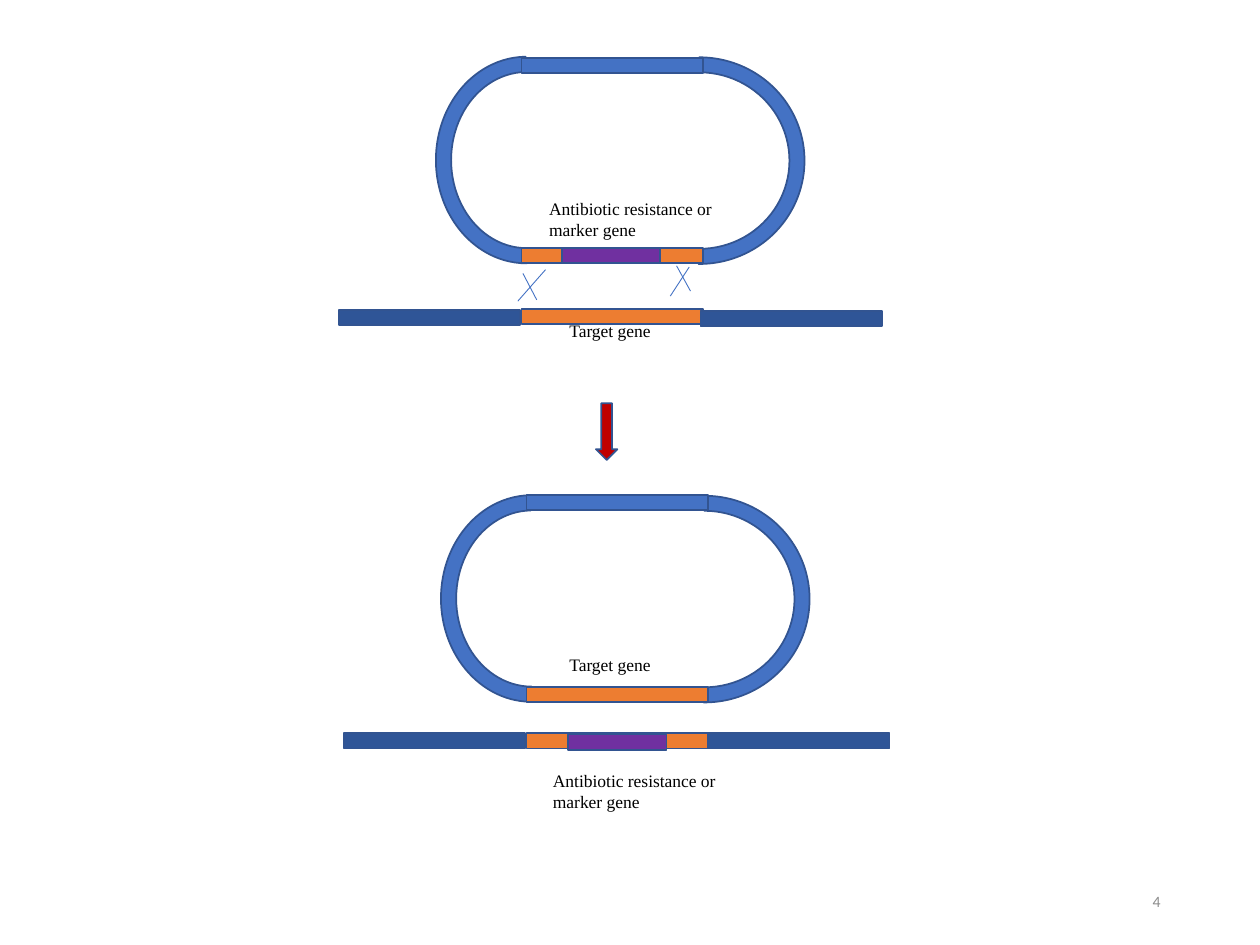
from lxml.etree import SubElement
from pptx import Presentation
from pptx.dml.color import RGBColor
from pptx.enum.shapes import MSO_CONNECTOR as Connector, MSO_SHAPE as Shape
from pptx.enum.text import MSO_ANCHOR as Anchor, MSO_AUTO_SIZE as AutoSize, PP_ALIGN as Align
from pptx.oxml.ns import qn
from pptx.util import Inches, Pt

COLORS = {
    "plasmid": "4472C4",
    "outline": "325491",
    "target": "ED7D31",
    "marker": "7030A0",
    "chromosome": "2F5597",
    "arrow": "C00000",
    "text": "000000",
    "number": "8C8C8C",
}
BAR_WIDTH, BAR_HEIGHT, MARKER_WIDTH = 1.44, 0.12, 0.78
MARKER_LABEL = "Antibiotic resistance or marker gene"
TARGET_LABEL = "Target gene"


def color(name):
    return RGBColor.from_string(COLORS[name])


def add_block(shapes, kind, left, top, width, height, fill):
    block = shapes.add_shape(kind, Inches(left), Inches(top), Inches(width), Inches(height))
    block.shadow.inherit = False
    block.fill.solid()
    block.fill.fore_color.rgb = color(fill)
    block.line.color.rgb = color("outline")
    block.line.width = Pt(1)
    return block


def add_bar(shapes, left, top, fill, width=BAR_WIDTH):
    add_block(shapes, Shape.RECTANGLE, left, top, width, BAR_HEIGHT, fill)


def add_arc(shapes, left, top, width, height, rotation, end_angle, thickness):
    arc = add_block(shapes, Shape.BLOCK_ARC, left, top, width, height, "plasmid")
    arc.rotation = rotation
    for index, value in enumerate((108, end_angle, thickness)):
        arc.adjustments[index] = value


def add_plasmid_ends(shapes, left, top):
    add_arc(shapes, left, top, 1.64, 1.44, 270, 215.64, 0.084)
    add_arc(shapes, left + 1.37, top - 0.11, 1.64, 1.67, 90, 0.22, 0.073)


def add_text(shapes, text, left, top, width, height, size=10,
             font="Times New Roman", fill="text", wrap=True):
    box = shapes.add_textbox(Inches(left), Inches(top), Inches(width), Inches(height))
    frame = box.text_frame
    frame.text = text
    frame.word_wrap = wrap
    frame.auto_size = AutoSize.SHAPE_TO_FIT_TEXT
    span = frame.paragraphs[0].runs[0]
    span.font.size = Pt(size)
    span.font.name = font
    span.font.color.rgb = color(fill)
    return frame


def add_marker_label(shapes, left, top):
    add_text(shapes, MARKER_LABEL, left, top, 1.5, 0.44)


def add_target_label(shapes, top):
    add_text(shapes, TARGET_LABEL, 4.42, top, 0.88, 0.27, wrap=False)


def add_crossover_line(shapes, start_x, start_y, end_x, end_y):
    line = shapes.add_connector(Connector.STRAIGHT, Inches(start_x), Inches(start_y),
                                Inches(end_x), Inches(end_y))
    line.line.color.rgb = color("plasmid")
    line.line.width = Pt(0.5)
    SubElement(line._element.spPr, qn("a:effectLst"))


def add_page_number(shapes, number):
    frame = add_text(shapes, number, 7.06, 6.95, 2.25, 0.4, 9, "Calibri", "number")
    frame.auto_size = AutoSize.NONE
    frame.vertical_anchor = Anchor.MIDDLE
    frame.paragraphs[0].alignment = Align.RIGHT


def add_after_exchange(shapes):
    left = 4.18
    add_plasmid_ends(shapes, 3.4, 4.03)
    add_bar(shapes, left, 5.45, "target")
    add_bar(shapes, left, 5.82, "target")
    add_bar(shapes, 4.51, 5.83, "marker", MARKER_WIDTH)
    add_marker_label(shapes, 4.29, 6.06)
    add_bar(shapes, 2.73, 5.82, "chromosome")
    add_bar(shapes, left + BAR_WIDTH, 5.82, "chromosome")
    add_target_label(shapes, 5.14)
    add_bar(shapes, left, 3.93, "plasmid")


def add_before_exchange(shapes):
    left = 4.14
    add_plasmid_ends(shapes, 3.36, 0.55)
    add_bar(shapes, left, 1.97, "target")
    add_bar(shapes, left, 2.45, "target")
    add_bar(shapes, 4.46, 1.97, "marker", MARKER_WIDTH)
    add_marker_label(shapes, 4.26, 1.52)
    add_bar(shapes, 2.69, 2.46, "chromosome")
    add_bar(shapes, 5.56, 2.47, "chromosome")
    add_target_label(shapes, 2.49)
    for ends in ((5.37, 2.11, 5.48, 2.31), (4.15, 2.17, 4.26, 2.38),
                 (5.47, 2.12, 5.32, 2.35), (4.11, 2.39, 4.33, 2.14)):
        add_crossover_line(shapes, *ends)
    add_bar(shapes, left, 0.46, "plasmid")


def main():
    deck = Presentation()
    deck.slide_width, deck.slide_height = Inches(10), Inches(7.5)
    page = deck.slides.add_slide(deck.slide_layouts[6])
    add_page_number(page.shapes, "4")
    add_block(page.shapes, Shape.DOWN_ARROW, 4.73, 3.2, 0.17, 0.45, "arrow")
    add_after_exchange(page.shapes.add_group_shape().shapes)
    add_before_exchange(page.shapes)
    deck.save("out.pptx")


if __name__ == "__main__":
    main()
